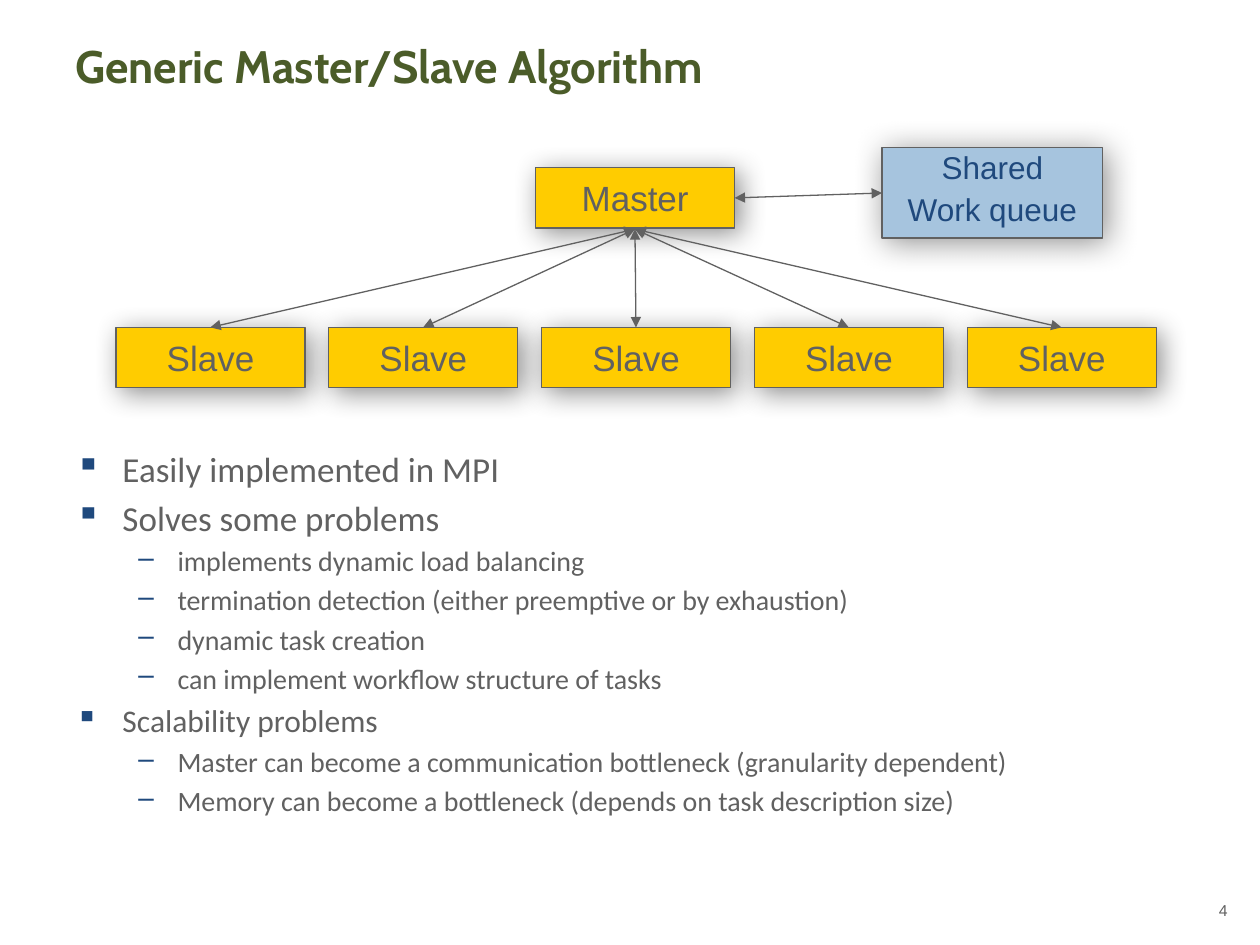
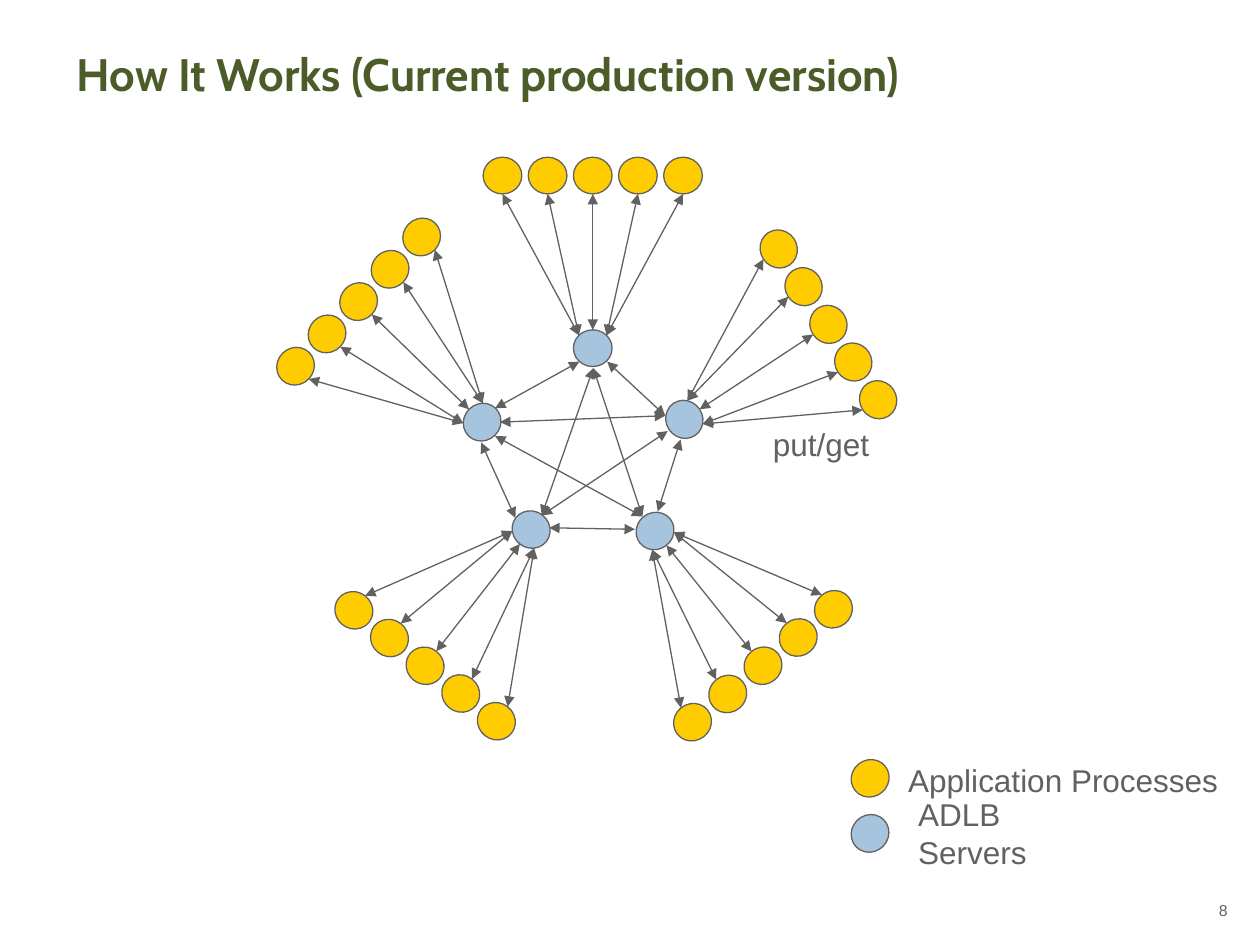
"""Builds two slides on master/slave scheduling and the server network behind it."""
from math import cos, radians, sin

from lxml import etree
from pptx import Presentation
from pptx.dml.color import RGBColor
from pptx.enum.shapes import MSO_CONNECTOR, MSO_SHAPE
from pptx.enum.text import MSO_ANCHOR, PP_ALIGN
from pptx.oxml.ns import qn
from pptx.util import Cm, Pt

RECTANGLE, ELLIPSE = MSO_SHAPE.RECTANGLE, MSO_SHAPE.OVAL
STRAIGHT = MSO_CONNECTOR.STRAIGHT
LEFT, CENTER, RIGHT = PP_ALIGN.LEFT, PP_ALIGN.CENTER, PP_ALIGN.RIGHT
TOP, MIDDLE = MSO_ANCHOR.TOP, MSO_ANCHOR.MIDDLE

GREY, GREEN, NAVY = "616161", "4B5C29", "1F497D"
YELLOW, BLUE = "FFCC00", "A6C4DE"
hex_color = RGBColor.from_string


def add_box(slide, place, text="", preset=None, fill=None, size=18, color=GREY,
            font="Arial", align=CENTER, anchor=MIDDLE, wrap=False):
    """Add a text box, or a filled and outlined preset shape."""
    lengths = [Cm(value) for value in place]
    if preset is None:
        box = slide.shapes.add_textbox(*lengths)
    else:
        box = slide.shapes.add_shape(preset, *lengths)
        box.shadow.inherit = False
        box.fill.solid()
        box.fill.fore_color.rgb = hex_color(fill)
        box.line.color.rgb = hex_color(GREY)
        box.line.width = Pt(0.75)
    if text:
        frame = box.text_frame
        frame.text = text
        frame.word_wrap = wrap
        frame.vertical_anchor = anchor
        for paragraph in frame.paragraphs:
            paragraph.alignment = align
            paragraph.font.size = Pt(size)
            paragraph.font.name = font
            paragraph.font.color.rgb = hex_color(color)
    return box


def add_arrow(slide, start, end):
    """Add a thin line with an arrowhead at both ends."""
    arrow = slide.shapes.add_connector(STRAIGHT, *[Cm(value) for value in (*start, *end)])
    arrow.line.color.rgb = hex_color(GREY)
    arrow.line.width = Pt(0.75)
    properties = arrow._element.spPr
    for tag in ("a:headEnd", "a:tailEnd"):
        etree.SubElement(properties.find(qn("a:ln")), qn(tag), type="triangle")
    etree.SubElement(properties, qn("a:effectLst"))


deck = Presentation()
deck.slide_width, deck.slide_height = Cm(25.4), Cm(19.05)

slides = []
for heading, place, number in (
    ("Generic Master/Slave Algorithm", (1.27, 0.64, 22.83, 1.12), "4"),
    ("How It Works (Current production version)", (1.3, 0.81, 22.83, 1.45), "8"),
):
    slide = deck.slides.add_slide(deck.slide_layouts[6])
    title = add_box(slide, place, heading, size=26, color=GREEN, font="Cabin",
                    align=LEFT, anchor=TOP, wrap=True)
    title.text_frame.paragraphs[0].font.bold = True
    add_box(slide, (23.93, 18.03, 1.07, 1.02), number, size=9,
            align=RIGHT, anchor=TOP, wrap=True)
    slides.append(slide)
algorithm, network = slides

points = (
    (0, 20, "Easily implemented in MPI"),
    (0, 20, "Solves some problems"),
    (1, 16, "implements dynamic load balancing"),
    (1, 16, "termination detection (either preemptive or by exhaustion)"),
    (1, 16, "dynamic task creation"),
    (1, 16, "can implement workflow structure of tasks"),
    (0, 18, "Scalability problems"),
    (1, 16, "Master can become a communication bottleneck (granularity dependent)"),
    (1, 16, "Memory can become a bottleneck (depends on task description size)"),
)
bullet_styles = (("▪", 0.95, -0.95), ("–", 2.06, -0.79))
body = add_box(algorithm, (1.27, 8.89, 22.83, 8.97), "\n".join(point[2] for point in points),
               font="Calibri", align=LEFT, anchor=TOP, wrap=True)
for index, (level, size, _) in enumerate(points):
    paragraph = body.text_frame.paragraphs[index]
    symbol, margin, indent = bullet_styles[level]
    paragraph.level = level
    paragraph.font.size = Pt(size)
    properties = paragraph._p.get_or_add_pPr()
    properties.set("marL", str(Cm(margin)))
    properties.set("indent", str(Cm(indent)))
    bullet_color = etree.Element(qn("a:buClr"))
    etree.SubElement(bullet_color, qn("a:srgbClr"), val=NAVY)
    bullet = etree.Element(qn("a:buChar"), char=symbol)
    properties.insert(0, bullet_color)
    properties.insert(1, bullet)
    if index:
        paragraph.space_before = Pt(size * 0.2)

slave_lefts = [2.34 + 4.29 * column for column in range(5)]
processes = [add_box(algorithm, (10.8, 3.38, 4.01, 1.22), "Master", RECTANGLE, YELLOW, 20)]
for left in slave_lefts:
    processes.append(add_box(algorithm, (left, 6.6, 3.81, 1.22), "Slave", RECTANGLE, YELLOW, 20))
for left in slave_lefts:
    add_arrow(algorithm, (12.8, 4.62), (left + 1.9, 6.6))

queue = add_box(algorithm, (17.78, 2.97, 4.45, 1.83), "Shared\nWork queue",
                RECTANGLE, BLUE, color=NAVY)
for paragraph in queue.text_frame.paragraphs:
    paragraph.line_spacing = 0.7
queue.text_frame.paragraphs[1].space_before = Pt(9)
add_arrow(algorithm, (14.81, 3.99), (17.78, 3.89))

for box, blur, distance in [(process, 16, 4) for process in processes] + [(queue, 19, 3)]:
    effects = box._element.spPr.find(qn("a:effectLst"))
    shadow = etree.SubElement(effects, qn("a:outerShdw"), blurRad=str(Pt(blur)),
                              dist=str(Pt(distance)), dir="2700000", rotWithShape="0")
    shade = etree.SubElement(shadow, qn("a:srgbClr"), val="000000")
    etree.SubElement(shade, qn("a:alpha"), val="43000")

NODE_WIDTH, NODE_HEIGHT = 0.78, 0.74
APP_STEP, SERVER_DISTANCE = 0.91, 3.48
server_sites = ((-0.28, -0.26), (-0.28, -0.26), (0, -0.37), (0.28, -0.26), (0.28, -0.26))
clusters = (
    (15.38, 13.42, 141.3),
    (16.7, 6.54, 56.6),
    (7.23, 6.08, 314.3),
    (11.95, 3.54, 0),
    (8.57, 13.42, 217.9),
)
for center_x, center_y, angle in clusters:
    cosine, sine = cos(radians(angle)), sin(radians(angle))
    app_spots = [(APP_STEP * (index - 2), 0) for index in range(5)]
    server_spot = (0, SERVER_DISTANCE)
    for x, y in app_spots + [server_spot]:
        node_x = center_x + x * cosine - y * sine
        node_y = center_y + x * sine + y * cosine
        node = add_box(network, (node_x - NODE_WIDTH / 2, node_y - NODE_HEIGHT / 2,
                                 NODE_WIDTH, NODE_HEIGHT),
                       preset=ELLIPSE, fill=BLUE if (x, y) == server_spot else YELLOW)
        node.rotation = angle
    for (app_x, _), (site_x, site_y) in zip(app_spots, server_sites):
        ends = ((app_x, NODE_HEIGHT / 2), (site_x, SERVER_DISTANCE + site_y))
        add_arrow(network, *[(center_x + x * cosine - y * sine,
                              center_y + x * sine + y * cosine) for x, y in ends])

server_links = (
    ((9.98, 8.23), (11.68, 7.29)),
    ((12.24, 7.29), (13.41, 8.38)),
    ((9.7, 8.92), (10.39, 10.44)),
    ((13.72, 8.86), (13.26, 10.31)),
    ((11.07, 10.64), (12.8, 10.67)),
    ((10.08, 8.51), (13.41, 8.38)),
    ((9.98, 8.79), (12.95, 10.41)),
    ((13.46, 8.69), (10.92, 10.39)),
    ((11.96, 7.42), (10.92, 10.39)),
    ((11.96, 7.42), (12.95, 10.41)),
)
for start, end in server_links:
    add_arrow(network, start, end)

for label, fill, key_top, angle, place in (
    ("Application Processes", YELLOW, 15.32, 141.3, (18.06, 15.21, 6.76, 1.02)),
    ("ADLB Servers", BLUE, 16.43, 314.3, (18.26, 16.28, 4.52, 1.02)),
):
    key = add_box(network, (17.15, key_top, NODE_WIDTH, NODE_HEIGHT), preset=ELLIPSE, fill=fill)
    key.rotation = angle
    add_box(network, place, label, align=LEFT)
add_box(network, (15.32, 8.43, 2.46, 1.02), "put/get")

deck.save("out.pptx")
